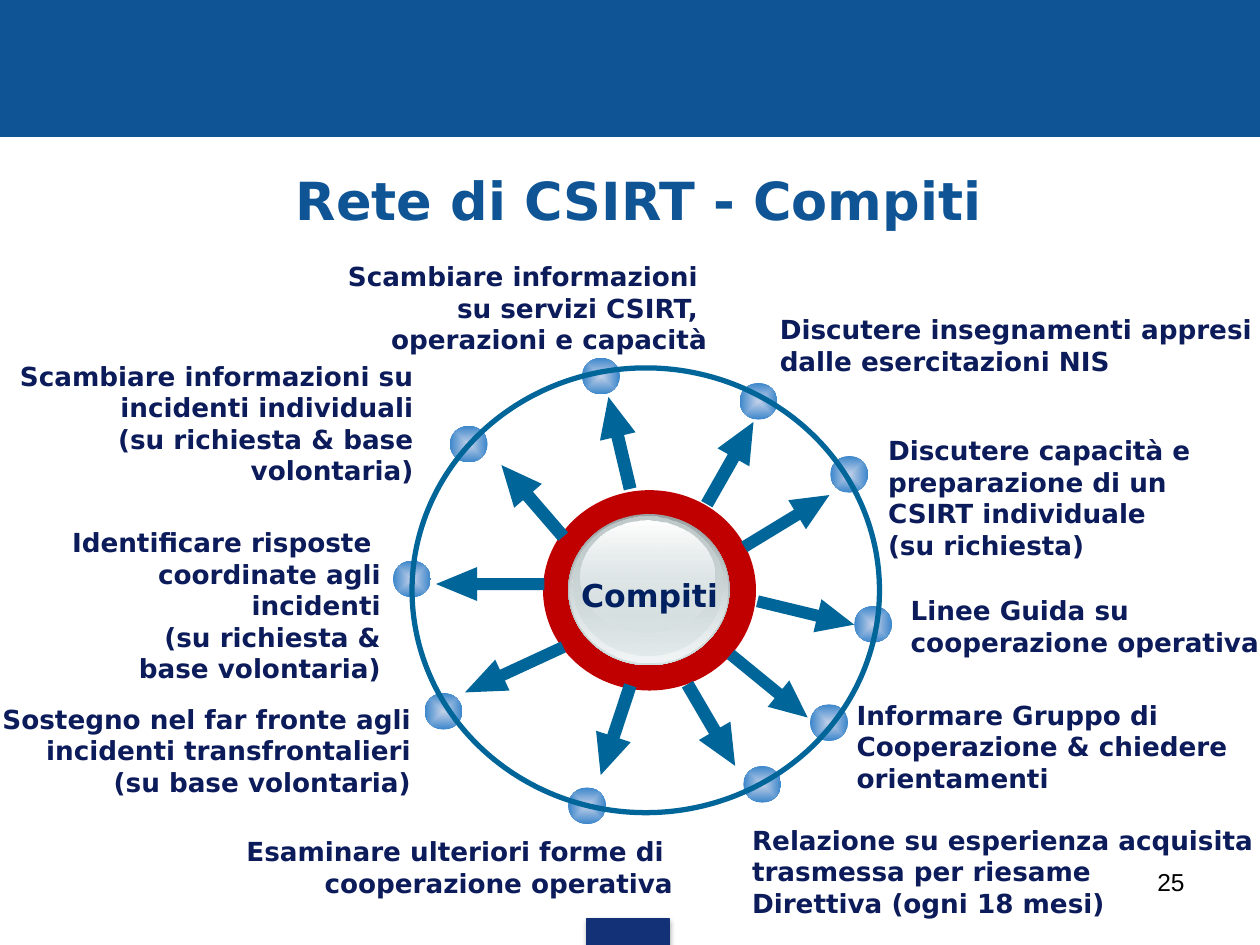
from lxml import etree
from pptx import Presentation
from pptx.dml.color import RGBColor
from pptx.enum.shapes import MSO_SHAPE
from pptx.enum.text import MSO_ANCHOR, PP_ALIGN
from pptx.oxml import parse_xml
from pptx.oxml.ns import nsdecls, qn
from pptx.util import Inches, Pt

RECT, OVAL, ARROW = MSO_SHAPE.RECTANGLE, MSO_SHAPE.OVAL, MSO_SHAPE.RIGHT_ARROW
LEFT, CENTER, RIGHT = PP_ALIGN.LEFT, PP_ALIGN.CENTER, PP_ALIGN.RIGHT
MIDDLE = MSO_ANCHOR.MIDDLE

COLORS = {
    "band": "0F5494", "footer": "133176", "ring": "006699", "hub": "C00000",
    "label": "0C1B5A", "hub_text": "002060", "black": "000000",
    "dot_light": "C2D0E8", "dot_dark": "3B86CB", "steel": "99A1A2",
    "silver": "C1CBCC", "mist": "D6E1E2", "pearl": "F2F5F5", "white": "FFFFFF",
}
FONT = "DejaVu Sans"
RADIAL = ('<a:path path="shape"><a:fillToRect l="50000" t="50000" '
          'r="50000" b="50000"/></a:path>')
VERTICAL = '<a:lin ang="5400000" scaled="0"/>'

DOT_SIZE = (0.3, 0.29)
DOTS = [(4.62, 2.84), (5.87, 3.04), (6.59, 3.62), (6.78, 4.81), (6.43, 5.59),
        (5.9, 6.08), (4.51, 6.25), (3.37, 5.5), (3.12, 4.45), (3.57, 3.38)]

# Button layers: box, then (colour, opacity in percent) at top and bottom
BUTTON = [
    ((4.51, 4.08, 1.28, 1.2), ("steel", 100), ("mist", 100)),
    ((4.52, 4.09, 1.25, 1.17), ("mist", 0), ("pearl", 100)),
    ((4.54, 4.1, 1.19, 1.1), ("silver", 100), ("mist", 48)),
    ((4.61, 4.13, 1.06, 0.89), ("white", 100), ("mist", 38)),
]

# Arrow sizes with head length, then left, top, size and rotation
STEEP, SLANTED, LONG = (0.75, 0.29, 1.11), (0.79, 0.27, 1.11), (0.86, 0.27, 1.21)
ARROWS = [
    (4.54, 3.37, STEEP, 256.7), (5.42, 3.53, STEEP, 299.6),
    (5.85, 4, SLANTED, 328.7), (6, 4.73, SLANTED, 13.6),
    (5.71, 5.31, SLANTED, 39.3), (5.27, 5.61, STEEP, 59.7),
    (4.51, 5.65, STEEP, 108.3), (3.65, 5.18, LONG, 155.2),
    (3.46, 4.5, LONG, 180), (3.85, 3.83, STEEP, 229.2),
]

# "\v" is a line break, "\n" a new paragraph
TASKS = [
    ((2.64, 2.02, 3.07, 0.86), RIGHT,
     "Scambiare informazioni \vsu servizi CSIRT, \voperazioni e capacità"),
    ((6.09, 2.44, 3.95, 0.61), LEFT,
     "Discutere insegnamenti appresi\vdalle esercitazioni NIS"),
    ((6.95, 3.4, 2.6, 1.11), LEFT,
     "Discutere capacità e\vpreparazione di un\vCSIRT individuale\v(su richiesta)"),
    ((7.13, 4.67, 2.97, 0.61), LEFT, "Linee Guida su\vcooperazione operativa"),
    ((6.7, 5.5, 3.22, 0.86), LEFT,
     "Informare Gruppo di\vCooperazione & chiedere\vorientamenti"),
    ((5.87, 6.49, 4.19, 0.86), LEFT,
     "Relazione su esperienza acquisita\vtrasmessa per riesame\v"
     "Direttiva (ogni 18 mesi)"),
    ((1.84, 6.58, 3.6, 0.61), RIGHT,
     "Esaminare ulteriori forme di \vcooperazione operativa"),
    ((-0.15, 5.53, 3.51, 0.86), RIGHT,
     "Sostegno nel far fronte agli\vincidenti transfrontalieri\v(su base volontaria)"),
    ((0.3, 4.13, 2.82, 1.36), RIGHT,
     "Identificare risposte \vcoordinate agli incidenti\v(su richiesta &\v"
     "base volontaria)"),
    ((-0.35, 2.81, 3.73, 1.11), RIGHT,
     "Scambiare informazioni su\nincidenti individuali\n"
     "(su richiesta & base volontaria)"),
]


def rgb(name):
    return RGBColor.from_string(COLORS[name])


class SlideBuilder:
    def __init__(self, slide):
        self.slide = slide

    def shape(self, kind, box, fill=None, line=None, width=0.75):
        shape = self.slide.shapes.add_shape(kind, *map(Inches, box))
        shape.shadow.inherit = False
        if fill:
            shape.fill.solid()
            shape.fill.fore_color.rgb = rgb(fill)
        else:
            shape.fill.background()
        if line:
            shape.line.color.rgb = rgb(line)
            shape.line.width = Pt(width)
        else:
            shape.line.fill.background()
        return shape

    def gradient_oval(self, box, start, end, direction):
        oval = self.shape(OVAL, box)
        stops = "".join(
            f'<a:gs pos="{pos}"><a:srgbClr val="{COLORS[color]}">'
            f'<a:alpha val="{opacity * 1000}"/></a:srgbClr></a:gs>'
            for pos, (color, opacity) in ((0, start), (100000, end)))
        gradient = parse_xml(f'<a:gradFill {nsdecls("a")} rotWithShape="1">'
                             f'<a:gsLst>{stops}</a:gsLst>{direction}</a:gradFill>')
        properties = oval.element.spPr
        properties.replace(properties.find(qn("a:noFill")), gradient)

    def arrow(self, left, top, size, rotation):
        length, height, head = size
        arrow = self.shape(ARROW, (left, top, length, height), "ring")
        arrow.adjustments[0] = 0.352
        arrow.adjustments[1] = head
        arrow.rotation = rotation

    def footer_tab(self, box):
        tab = self.shape(RECT, box, "footer", "footer")
        shadow = etree.SubElement(
            tab.element.spPr.find(qn("a:effectLst")), qn("a:outerShdw"),
            blurRad=str(Pt(3.1)), dist=str(Pt(1.8)), dir="5400000", rotWithShape="0")
        color = etree.SubElement(shadow, qn("a:srgbClr"), val=COLORS["black"])
        etree.SubElement(color, qn("a:alpha"), val="35000")

    def style(self, frame, align, size, color, bold=True, font=FONT):
        for paragraph in frame.paragraphs:
            paragraph.alignment = align
            paragraph.font.name = font
            paragraph.font.size = Pt(size)
            paragraph.font.bold = bold
            paragraph.font.color.rgb = rgb(color)

    def text(self, box, text, align, size, color, **look):
        frame = self.slide.shapes.add_textbox(*map(Inches, box)).text_frame
        frame.word_wrap = True
        if align == LEFT:
            frame.margin_right = Inches(0.05)
        elif align == RIGHT:
            frame.margin_left = Inches(0.05)
        frame.text = text
        self.style(frame, align, size, color, **look)

    def title(self, box, text):
        title = self.slide.shapes.title
        title.left, title.top, title.width, title.height = map(Inches, box)
        title.text_frame.text = text
        title.text_frame.vertical_anchor = MIDDLE
        self.style(title.text_frame, CENTER, 30, "band")


def main():
    deck = Presentation()
    deck.slide_width, deck.slide_height = Inches(10), Inches(7.5)
    builder = SlideBuilder(deck.slides.add_slide(deck.slide_layouts[5]))

    builder.shape(RECT, (0, 0, 10, 1.08), "band", "band")
    builder.footer_tab((4.66, 7.29, 0.65, 0.22))
    builder.title((0.57, 1.07, 9, 1.02), "Rete di CSIRT - Compiti")

    for position in DOTS:
        builder.gradient_oval(position + DOT_SIZE, ("dot_light", 100),
                              ("dot_dark", 100), RADIAL)
    builder.shape(OVAL, (4.31, 3.89, 1.69, 1.59), "hub")
    for box, top_color, bottom_color in BUTTON:
        builder.gradient_oval(box, top_color, bottom_color, VERTICAL)
    for arrow in ARROWS:
        builder.arrow(*arrow)
    builder.shape(OVAL, (3.27, 2.92, 3.71, 3.53), line="ring", width=3)

    builder.text((4.51, 4.52, 1.29, 0.4), "Compiti", CENTER, 18, "hub_text")
    for box, align, task in TASKS:
        builder.text(box, task, align, 15, "label")
    builder.text((7.17, 6.83, 2.33, 0.52), "25", RIGHT, 14, "black",
                 bold=False, font="Arial")
    deck.save("out.pptx")


if __name__ == "__main__":
    main()
